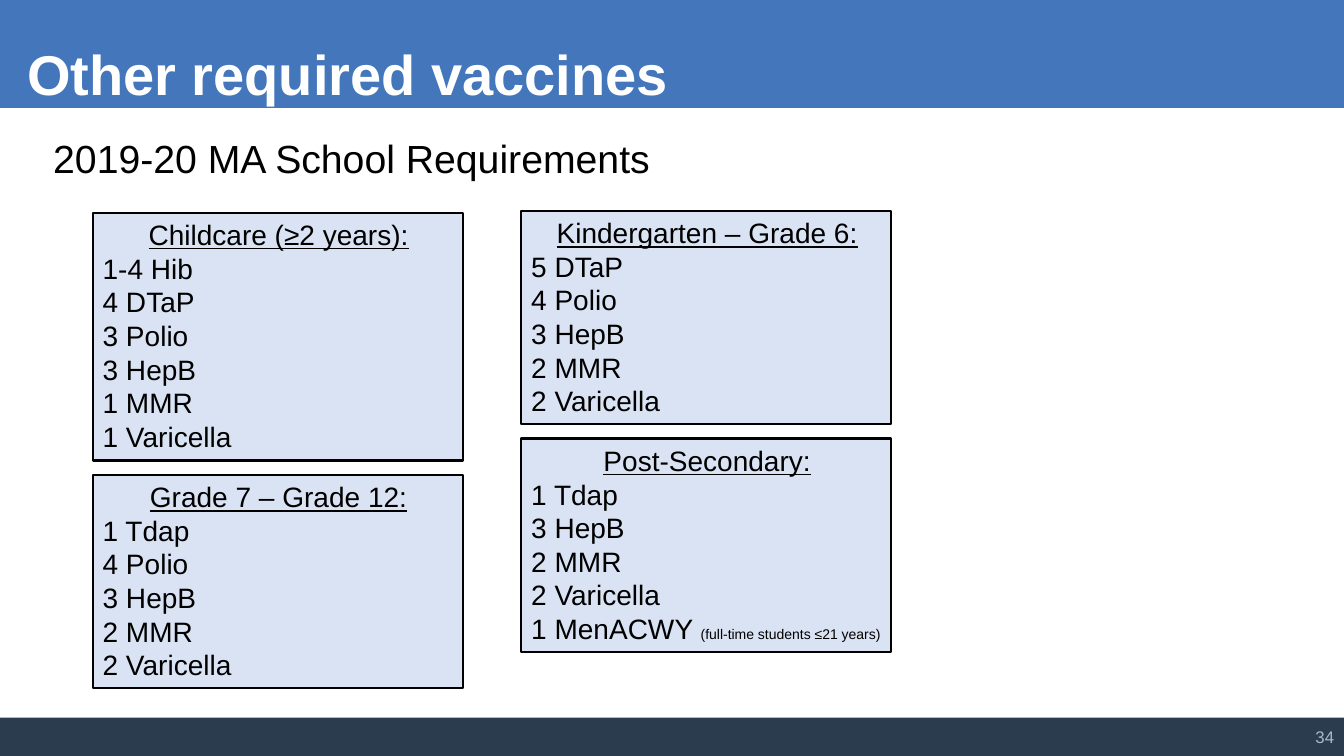
from dataclasses import dataclass
from pptx import Presentation
from pptx.dml.color import RGBColor as Rgb
from pptx.enum.shapes import MSO_SHAPE as Form
from pptx.enum.text import MSO_ANCHOR as Anchor, MSO_AUTO_SIZE as Fit, PP_ALIGN as Align
from pptx.util import Inches, Pt

TITLE = "Other required vaccines"
LEAD = "2019-20 MA School Requirements"
PAGE = "34"
COLUMNS = [
    (0.92, 2.11, [
        ("Childcare (≥2 years):",
         ["1-4 Hib", "4 DTaP", "3 Polio", "3 HepB", "1 MMR", "1 Varicella"]),
        ("Grade 7 – Grade 12:",
         ["1 Tdap", "4 Polio", "3 HepB", "2 MMR", "2 Varicella"]),
    ]),
    (5.17, 2.09, [
        ("Kindergarten – Grade 6:",
         ["5 DTaP", "4 Polio", "3 HepB", "2 MMR", "2 Varicella"]),
        ("Post-Secondary:",
         ["1 Tdap", "3 HepB", "2 MMR", "2 Varicella",
          ("1 MenACWY ", "(full-time students ≤21 years)")]),
    ]),
]
WIDE, HIGH = 13.33, 7.5
CARD, LINE, PAD, GAP = 3.67, 0.34, 0.08, 0.14


@dataclass(frozen=True)
class Theme:
    font: str = "Arial"
    head: str = "4376BB"
    foot: str = "2A3C4E"
    card: str = "DAE3F3"
    ink: str = "000000"
    white: str = "FFFFFF"
    mute: str = "ADB9CA"
    title: int = 40
    lead: int = 28
    body: int = 20
    page: int = 12
    note: int = 10


theme = Theme()


def write(para, text, size=theme.body, color=theme.ink, bold=False,
          under=False, align=Align.LEFT):
    para.alignment = align
    run = para.add_run()
    run.text = text
    font = run.font
    font.name, font.size = theme.font, Pt(size)
    font.bold, font.underline = bold, under
    font.color.rgb = Rgb.from_string(color)


def add_box(slide, x, y, w, h, fill, line=None):
    box = slide.shapes.add_shape(Form.RECTANGLE, *map(Inches, (x, y, w, h)))
    box.shadow.inherit = False
    box.fill.solid()
    box.fill.fore_color.rgb = Rgb.from_string(fill)
    if line:
        box.line.color.rgb = Rgb.from_string(line)
        box.line.width = Pt(1.5)
    else:
        box.line.fill.background()
    return box


def add_text(slide, x, y, w, h, text, anchor=Anchor.TOP, **style):
    frame = slide.shapes.add_textbox(*map(Inches, (x, y, w, h))).text_frame
    frame.word_wrap = True
    frame.vertical_anchor = anchor
    write(frame.paragraphs[0], text, **style)


def add_title(slide):
    title = slide.shapes.title
    title.left, title.top, title.width, title.height = map(
        Inches, (0, 0.28, 11.74, 0.65))
    title.element.getparent().append(title.element)
    frame = title.text_frame
    frame.auto_size = Fit.NONE
    frame.word_wrap = True
    frame.vertical_anchor = Anchor.TOP
    frame.margin_left, frame.margin_top = Inches(0.27), Inches(0.11)
    frame.margin_bottom = 0
    write(frame.paragraphs[0], TITLE, size=theme.title,
          color=theme.white, bold=True)


def add_card(slide, x, y, h, head, items):
    box = add_box(slide, x, y, CARD, h, theme.card, theme.ink)
    frame = box.text_frame
    frame.word_wrap = True
    frame.vertical_anchor = Anchor.TOP
    frame.margin_right = Inches(0.08)
    write(frame.paragraphs[0], head, under=True, align=Align.CENTER)
    for item in items:
        para = frame.add_paragraph()
        if isinstance(item, tuple):
            dose, note = item
            write(para, dose)
            write(para, note, size=theme.note)
        else:
            write(para, item)


def main():
    deck = Presentation()
    deck.slide_width, deck.slide_height = Inches(WIDE), Inches(HIGH)
    slide = deck.slides.add_slide(deck.slide_layouts[5])
    add_box(slide, 0, 0, WIDE, 1.07, theme.head)
    add_box(slide, 0, 7.12, WIDE, 0.38, theme.foot)
    add_title(slide)
    add_text(slide, 10.34, 7.11, 2.99, 0.4, PAGE, anchor=Anchor.MIDDLE,
             size=theme.page, color=theme.mute, align=Align.RIGHT)
    add_text(slide, 0.43, 1.28, 6.7, 0.57, LEAD, size=theme.lead)
    for x, y, cards in COLUMNS:
        for head, items in cards:
            h = LINE * (len(items) + 1) + PAD
            add_card(slide, x, y, h, head, items)
            y += h + GAP
    deck.save("out.pptx")


if __name__ == "__main__":
    main()
